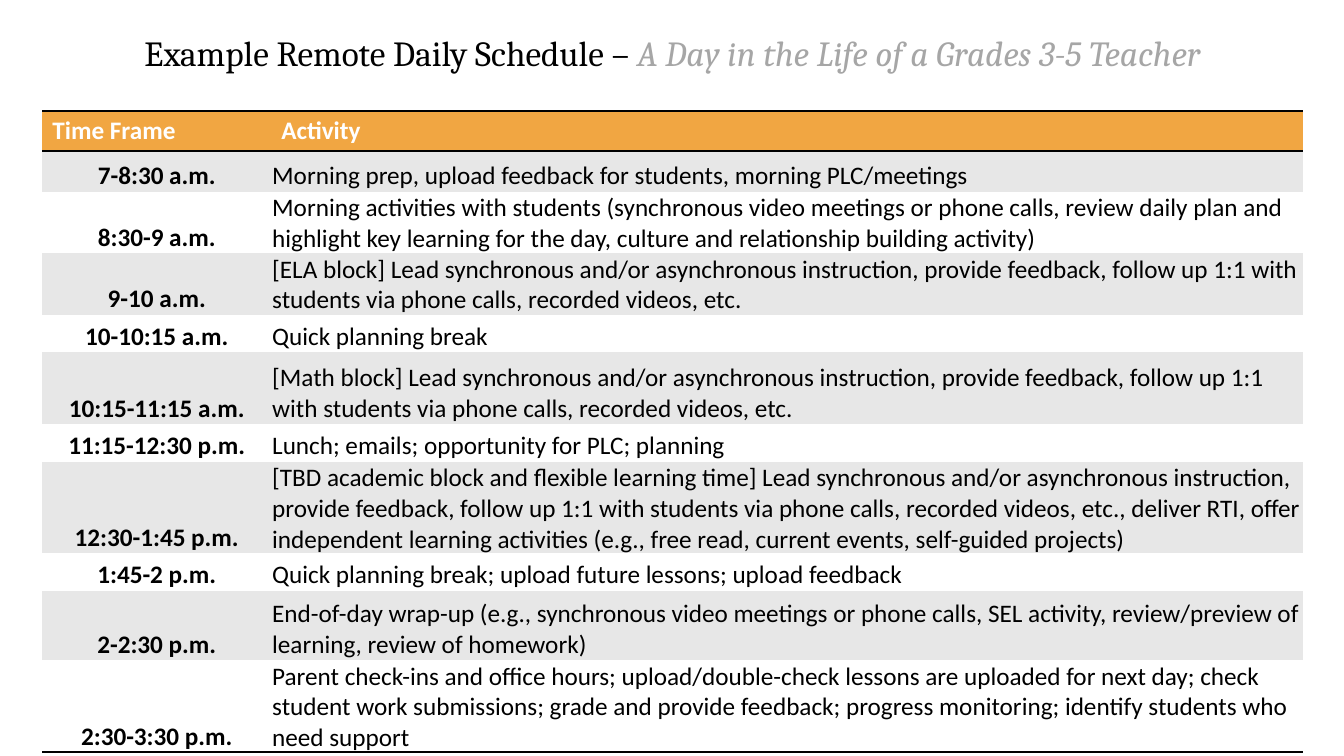
from dataclasses import dataclass

import lxml.etree
import pptx
import pptx.dml.color
import pptx.enum.text
import pptx.oxml.ns
import pptx.util

Inches = pptx.util.Inches
qn = pptx.oxml.ns.qn
ALIGN = pptx.enum.text.PP_ALIGN
ANCHOR = pptx.enum.text.MSO_ANCHOR


@dataclass(frozen=True)
class Theme:
    black: str = "000000"
    white: str = "FFFFFF"
    gray: str = "A6A6A6"
    orange: str = "F1A642"
    band: str = "E7E7E7"
    title_font: str = "Cambria"
    body_font: str = "Calibri"
    title_size: float = 25.2
    body_size: float = 18
    rule_width: float = 2
    plain_table: str = "{2D5ABB26-0587-4C30-8999-92F81FD0307C}"


THEME = Theme()
HEADER = ("Time Frame", "Activity")
SCHEDULE = [
    ("7-8:30 a.m.", "Morning prep, upload feedback for students, morning PLC/meetings"),
    ("8:30-9 a.m.",
     "Morning activities with students (synchronous video meetings or phone calls, review daily plan and\n"
     "highlight key learning for the day, culture and relationship building activity)"),
    ("9-10 a.m.",
     "[ELA block] Lead synchronous and/or asynchronous instruction, provide feedback, follow up 1:1 with\n"
     "students via phone calls, recorded videos, etc."),
    ("10-10:15 a.m.", "Quick planning break"),
    ("10:15-11:15 a.m.",
     "[Math block] Lead synchronous and/or asynchronous instruction, provide feedback, follow up 1:1 "
     "with students via phone calls, recorded videos, etc."),
    ("11:15-12:30 p.m.", "Lunch; emails; opportunity for PLC; planning"),
    ("12:30-1:45 p.m.",
     "[TBD academic block and flexible learning time] Lead synchronous and/or asynchronous instruction,\n"
     "provide feedback, follow up 1:1 with students via phone calls, recorded videos, etc., deliver RTI, "
     "offer independent learning activities (e.g., free read, current events, self-guided projects)"),
    ("1:45-2 p.m.", "Quick planning break; upload future lessons; upload feedback"),
    ("2-2:30 p.m.",
     "End-of-day wrap-up (e.g., synchronous video meetings or phone calls, SEL activity, "
     "review/preview of learning, review of homework)"),
    ("2:30-3:30 p.m.",
     "Parent check-ins and office hours; upload/double-check lessons are uploaded for next day; check\n"
     "student work submissions; grade and provide feedback; progress monitoring; identify students who\n"
     "need support"),
]
COLUMN_WIDTHS = (2.27, 10.23)
ROW_HEIGHT = 0.37
SPECIAL_HEIGHTS = {0: 0.38, 1: 0.4, 5: 0.72, 9: 0.69}


def set_attributes(target, values):
    for name, value in values.items():
        setattr(target, name, value)


def add_run(p, text, color, font, size, **style):
    r = p.add_run()
    r.text = text
    set_attributes(r.font, {"name": font, "size": pptx.util.Pt(size), **style})
    r.font.color.rgb = pptx.dml.color.RGBColor.from_string(color)


def add_title(s):
    tf = s.shapes.add_textbox(Inches(0.92), Inches(0.12), Inches(11.5), Inches(0.86)).text_frame
    set_attributes(tf, {"word_wrap": True, "vertical_anchor": ANCHOR.MIDDLE})
    p = tf.paragraphs[0]
    set_attributes(p, {"alignment": ALIGN.CENTER, "line_spacing": 0.9})
    font = (THEME.title_font, THEME.title_size)
    add_run(p, "Example Remote Daily Schedule – ", THEME.black, *font)
    add_run(p, "A Day in the Life of a Grades 3-5 Teacher", THEME.gray, *font, italic=True)


def add_rule(cell, side):
    """Draw a cell border; call before the cell is filled, as the schema wants lines first."""
    tcPr = cell._tc.get_or_add_tcPr()
    ln = lxml.etree.SubElement(tcPr, qn(f"a:ln{side}"), w=str(pptx.util.Pt(THEME.rule_width)))
    fill = lxml.etree.SubElement(ln, qn("a:solidFill"))
    lxml.etree.SubElement(fill, qn("a:srgbClr"), val=THEME.black)


def fill_cell(cell, text, fill, color, bold, alignment, rules=""):
    for side in rules:
        add_rule(cell, side)
    cell.fill.solid()
    cell.fill.fore_color.rgb = pptx.dml.color.RGBColor.from_string(fill)
    tf = cell.text_frame
    for i, line in enumerate(text.split("\n")):
        p = tf.add_paragraph() if i else tf.paragraphs[0]
        p.alignment = alignment
        add_run(p, line, color, THEME.body_font, THEME.body_size, bold=bold)


def add_schedule(s):
    heights = [SPECIAL_HEIGHTS.get(i, ROW_HEIGHT) for i in range(len(SCHEDULE) + 1)]
    table = s.shapes.add_table(len(heights), len(COLUMN_WIDTHS), Inches(0.42), Inches(1.1),
                               Inches(sum(COLUMN_WIDTHS)), Inches(sum(heights))).table
    set_attributes(table, {"first_row": False, "horz_banding": False})
    table._tbl.tblPr.find(qn("a:tableStyleId")).text = THEME.plain_table
    for column, width in zip(table.columns, COLUMN_WIDTHS):
        column.width = Inches(width)
    for row, height in zip(table.rows, heights):
        row.height = Inches(height)

    for col, text in enumerate(HEADER):
        fill_cell(table.cell(0, col), text, THEME.orange, THEME.white, True, ALIGN.LEFT, "TB")
    snug = {"margin_left": Inches(0.01), "margin_right": Inches(0.01), "margin_top": Inches(0.01),
            "margin_bottom": 0, "vertical_anchor": ANCHOR.BOTTOM}
    for row, entry in enumerate(SCHEDULE, 1):
        fill = THEME.band if row % 2 else THEME.white
        rules = "B" if row == len(SCHEDULE) else ""
        for col, text in enumerate(entry):
            cell = table.cell(row, col)
            set_attributes(cell, snug)
            alignment = ALIGN.LEFT if col else ALIGN.CENTER
            fill_cell(cell, text, fill, THEME.black, col == 0, alignment, rules)


def main():
    prs = pptx.Presentation()
    set_attributes(prs, {"slide_width": Inches(13.33), "slide_height": Inches(7.5)})
    s = prs.slides.add_slide(prs.slide_layouts[6])
    add_title(s)
    add_schedule(s)
    prs.save("out.pptx")


if __name__ == "__main__":
    main()
